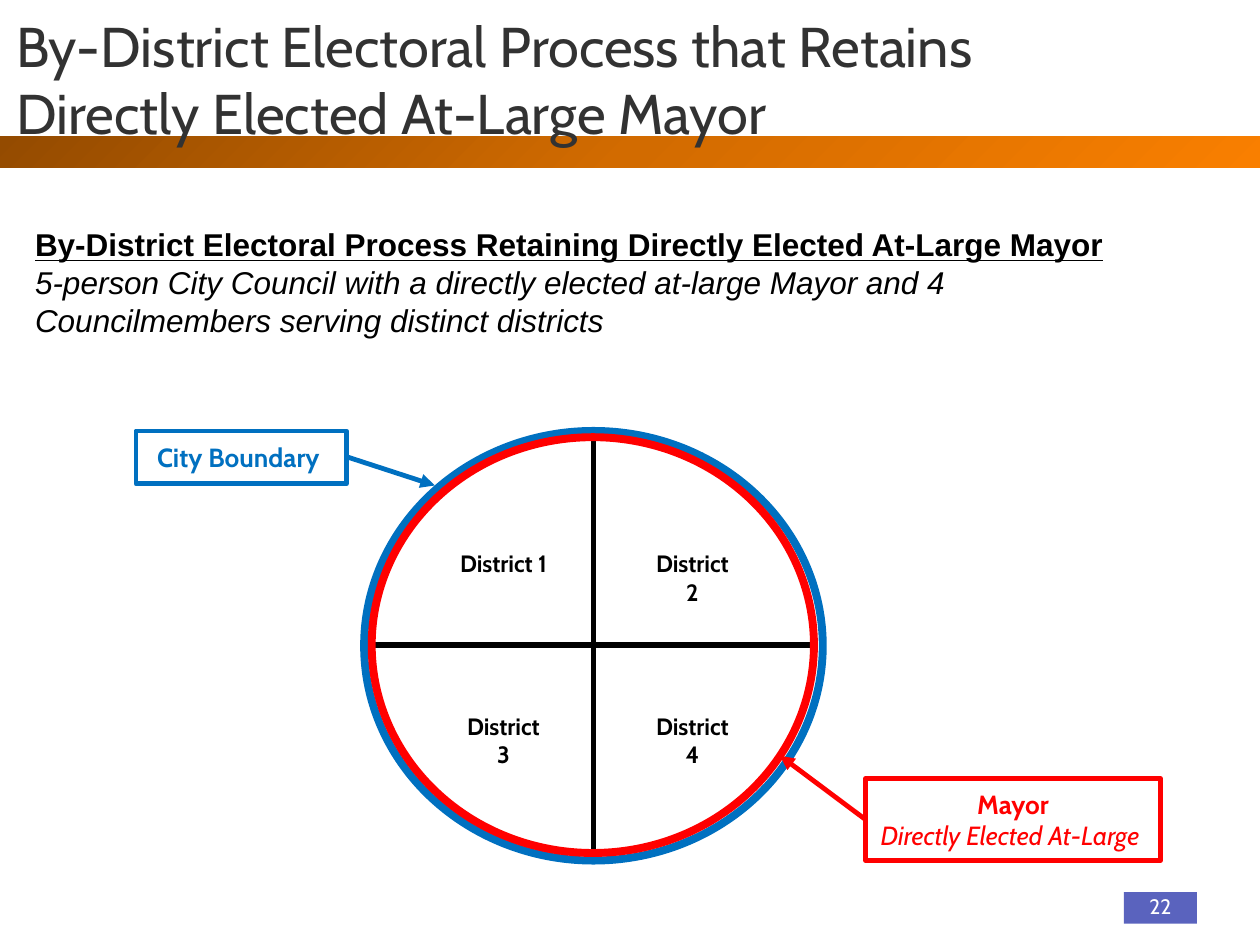
from lxml import etree
from pptx import Presentation
from pptx.dml.color import RGBColor
from pptx.enum.shapes import MSO_CONNECTOR, MSO_SHAPE
from pptx.enum.text import MSO_ANCHOR, PP_ALIGN
from pptx.oxml import parse_xml
from pptx.oxml.ns import qn
from pptx.util import Inches, Pt

RECTANGLE, OVAL, CALLOUT = MSO_SHAPE.RECTANGLE, MSO_SHAPE.OVAL, MSO_SHAPE.LINE_CALLOUT_1
STRAIGHT = MSO_CONNECTOR.STRAIGHT
TOP, MIDDLE = MSO_ANCHOR.TOP, MSO_ANCHOR.MIDDLE
LEFT, CENTER = PP_ALIGN.LEFT, PP_ALIGN.CENTER

BLACK = RGBColor(0x00, 0x00, 0x00)
WHITE = RGBColor(0xFF, 0xFF, 0xFF)
CHARCOAL = RGBColor(0x32, 0x32, 0x32)
BLUE = RGBColor(0x00, 0x70, 0xC0)
RED = RGBColor(0xFF, 0x00, 0x00)
VIOLET = RGBColor(0x5A, 0x63, 0xBE)
BAND_STOPS = [(0, "944B00"), (50, "D26B00"), (100, "F97F00")]


def add_outline(kind, box, color=None, width=0):
    """Add an unfilled preset shape; without a color it has no line."""
    shape = slide.shapes.add_shape(kind, *map(Inches, box))
    shape.shadow.inherit = False
    shape.fill.background()
    if color is None:
        shape.line.fill.background()
    else:
        shape.line.color.rgb = color
        shape.line.width = Pt(width)
    return shape


def write(shape, lines, anchor=TOP, align=LEFT, **common):
    """Fill a shape with (text, font values) lines sharing the common font values."""
    frame = shape.text_frame
    frame.word_wrap = True
    frame.vertical_anchor = anchor
    for index, (text, values) in enumerate(lines):
        paragraph = frame.paragraphs[0] if index == 0 else frame.add_paragraph()
        paragraph.alignment = align
        run = paragraph.add_run()
        run.text = text
        values = {"name": "Cabin", **common, **values}
        run.font.color.rgb = values.pop("color")
        for key, value in values.items():
            setattr(run.font, key, value)


prs = Presentation()
prs.slide_width, prs.slide_height = Inches(10), Inches(7.5)
slide = prs.slides.add_slide(prs.slide_layouts[6])

# Page number and title band
page_number = add_outline(RECTANGLE, (8.92, 7.08, 0.58, 0.25))
page_number.fill.solid()
page_number.fill.fore_color.rgb = VIOLET
write(page_number, [("22", {})], MIDDLE, CENTER, size=Pt(12), color=WHITE)
page_number.text_frame.paragraphs[0].line_spacing = 0.9

band = add_outline(RECTANGLE, (0, 1.08, 10, 0.25))
band.fill.gradient()
stops = "".join(f'<a:gs pos="{pos * 1000}"><a:srgbClr val="{color}"/></a:gs>'
                for pos, color in BAND_STOPS)
gradient = band.element.spPr.find(qn("a:gradFill"))
gradient.getparent().replace(gradient, parse_xml(
    '<a:gradFill xmlns:a="http://schemas.openxmlformats.org/drawingml/2006/main" rotWithShape="1">'
    f'<a:gsLst>{stops}</a:gsLst><a:path path="circle">'
    '<a:fillToRect r="100000" b="100000"/></a:path></a:gradFill>'))

# City circle split into four districts
for x1, y1, x2, y2 in [(2.95, 5.12, 6.46, 5.12), (4.71, 3.47, 4.71, 6.77)]:
    divider = slide.shapes.add_connector(STRAIGHT, *map(Inches, (x1, y1, x2, y2)))
    divider.line.color.rgb = BLACK
    divider.line.width = Pt(3)
    etree.SubElement(divider.element.spPr, qn("a:effectLst"))

add_outline(OVAL, (2.89, 3.42, 3.64, 3.41), BLUE, 4.5)
add_outline(OVAL, (2.95, 3.47, 3.51, 3.3), RED, 4.5)

for index in range(4):
    row, column = divmod(index, 2)
    district = slide.shapes.add_textbox(Inches(3.55 + 1.5 * column), Inches(4.31 + 1.29 * row),
                                        Inches(0.89), Inches(0.56))
    write(district, [(f"District {index + 1}", {})], align=CENTER,
          size=Pt(13.5), bold=True, color=BLACK)

# Callouts pointing at the circles
callouts = [
    ((1.08, 3.42, 1.67, 0.42), BLUE, (0.5, 1.01, 1.03, 1.42),
     [("City Boundary ", {"bold": True})]),
    ((6.87, 6.18, 2.34, 0.65), RED, (0.5, 0, -0.28, -0.29),
     [("Mayor", {"bold": True}), ("Directly Elected At-Large ", {"italic": True})]),
]
for box, color, pointer, lines in callouts:
    callout = add_outline(CALLOUT, box, color, 2.75)
    for index, value in enumerate(pointer):
        callout.adjustments[index] = value
    line = callout.element.spPr.find(qn("a:ln"))
    etree.SubElement(line, qn("a:tailEnd"), type="triangle")
    write(callout, lines, MIDDLE, CENTER, size=Pt(15), color=color)

# Title and summary
title = slide.shapes.add_textbox(Inches(0.03), Inches(0.25), Inches(8.89), Inches(0.75))
write(title, [("By-District Electoral Process that Retains Directly Elected At-Large Mayor", {})],
      MIDDLE, size=Pt(32), color=CHARCOAL)

summary = slide.shapes.add_textbox(Inches(-0.32), Inches(1.74), Inches(9.5), Inches(1.01))
write(summary, [
    ("By-District Electoral Process Retaining Directly Elected At-Large Mayor",
     {"bold": True, "underline": True}),
    ("5-person City Council with a directly elected at-large Mayor and 4 Councilmembers "
     "serving distinct districts", {"italic": True}),
], name="Arial", size=Pt(18), color=BLACK)
for paragraph in summary.text_frame.paragraphs:
    paragraph._p.get_or_add_pPr().set("marL", str(Inches(0.5)))

prs.save("out.pptx")
